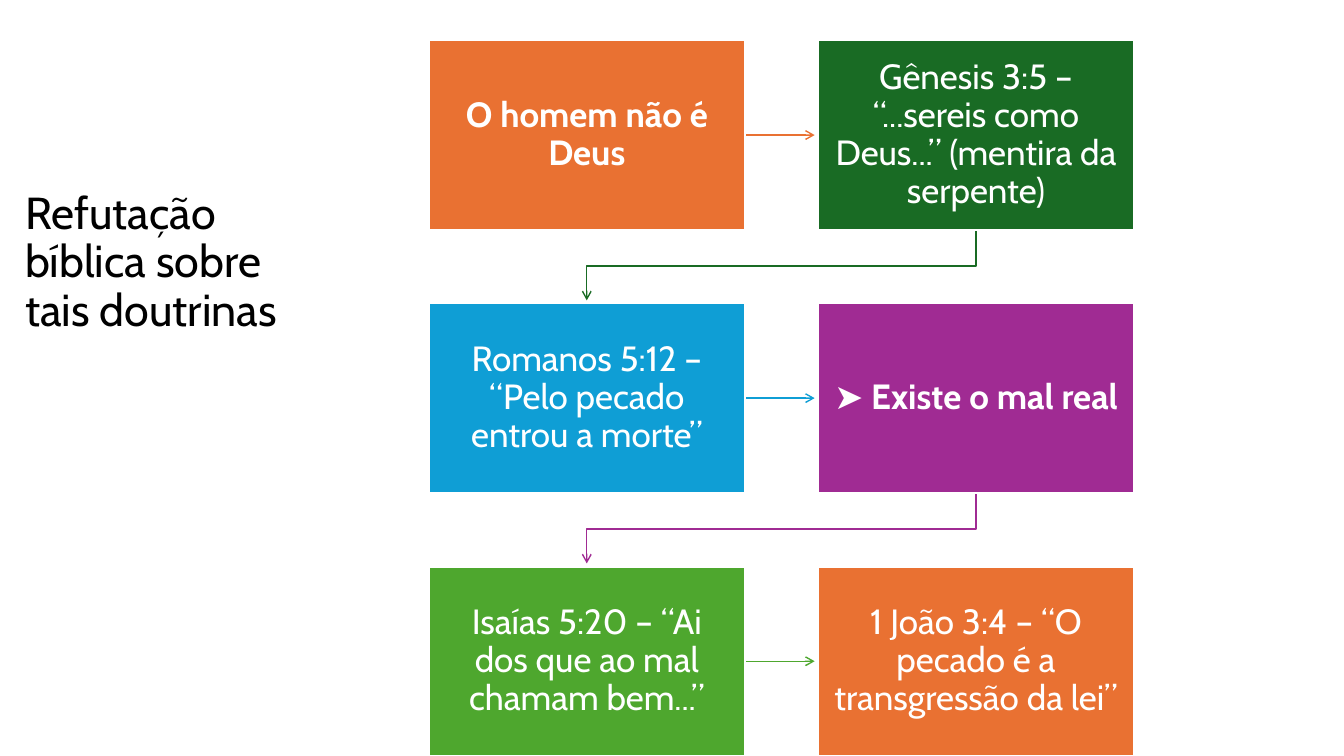
import pptx
import pptx.dml.color
import pptx.enum.shapes
import pptx.enum.text
import pptx.oxml
import pptx.oxml.ns
import pptx.util
from pptx.util import Inches

BOX_WIDTH, BOX_HEIGHT = 3.14, 1.88
LEFT, TOP = 4.25, 0.4
COLUMN_STEP, ROW_STEP = 3.86, 2.61
ARROW_GAP = 0.03

STEPS = [
    ("E97132", [("O homem não é Deus", True)]),
    ("196B24", [("Gênesis 3:5 – “...sereis como Deus...” (mentira da serpente)", False)]),
    ("0F9ED5", [("Romanos 5:12 – “Pelo pecado entrou a morte”", False)]),
    ("A02B93", [("➤ ", False), ("Existe o mal real", True)]),
    ("4EA72E", [("Isaías 5:20 – “Ai dos que ao mal chamam bem...”", False)]),
    ("E97132", [("1 João 3:4 – “O pecado é a transgressão da lei”", False)]),
]


def color(value):
    return pptx.dml.color.RGBColor.from_string(value)


class FlowSlide:
    """Draws the title, boxes and arrows of one slide in a shared style."""

    font = "Cabin"

    def __init__(self, presentation):
        self.slide = presentation.slides.add_slide(presentation.slide_layouts[6])

    def add_text(self, shape, runs, size, text_color, alignment):
        frame = shape.text_frame
        frame.word_wrap = True
        frame.vertical_anchor = pptx.enum.text.MSO_ANCHOR.MIDDLE
        paragraph = frame.paragraphs[0]
        paragraph.alignment = alignment
        paragraph.line_spacing = 0.9
        for text, bold in runs:
            run = paragraph.add_run()
            run.text = text
            run.font.name = self.font
            run.font.size = pptx.util.Pt(size)
            run.font.bold = bold
            run.font.color.rgb = color(text_color)

    def title(self, text, left, top, width, height):
        shape = self.slide.shapes.add_textbox(
            Inches(left), Inches(top), Inches(width), Inches(height))
        self.add_text(shape, [(text, False)], 32, "000000", pptx.enum.text.PP_ALIGN.LEFT)

    def box(self, left, top, fill, runs):
        shape = self.slide.shapes.add_shape(
            pptx.enum.shapes.MSO_SHAPE.RECTANGLE,
            Inches(left), Inches(top), Inches(BOX_WIDTH), Inches(BOX_HEIGHT))
        shape.shadow.inherit = False
        shape.fill.solid()
        shape.fill.fore_color.rgb = color(fill)
        shape.line.color.rgb = color("FFFFFF")
        shape.line.width = pptx.util.Pt(1.5)
        frame = shape.text_frame
        frame.margin_left = frame.margin_right = Inches(0.15)
        frame.margin_top = frame.margin_bottom = Inches(0.16)
        self.add_text(shape, runs, 25, "FFFFFF", pptx.enum.text.PP_ALIGN.CENTER)

    def arrow_line(self, shape, line_color):
        shape.line.color.rgb = color(line_color)
        shape.line.width = pptx.util.Pt(1)
        properties = shape.element.spPr
        line = properties.find(pptx.oxml.ns.qn("a:ln"))
        namespace = pptx.oxml.ns.nsdecls("a")
        line.append(pptx.oxml.parse_xml(f'<a:tailEnd {namespace} type="arrow"/>'))

    def straight_arrow(self, start, end, line_color):
        connector = self.slide.shapes.add_connector(
            pptx.enum.shapes.MSO_CONNECTOR.STRAIGHT,
            *[Inches(value) for value in start + end])
        self.arrow_line(connector, line_color)
        namespace = pptx.oxml.ns.nsdecls("a")
        connector.element.spPr.append(
            pptx.oxml.parse_xml(f"<a:effectLst {namespace}/>"))

    def elbow_arrow(self, start, end, line_color):
        middle = start[1] + 0.36
        points = [start, (start[0], middle), (end[0], middle), end]
        first, *others = [(Inches(x), Inches(y)) for x, y in points]
        builder = self.slide.shapes.build_freeform(*first)
        builder.add_line_segments(others, close=False)
        shape = builder.convert_to_shape()
        shape.shadow.inherit = False
        shape.fill.background()
        self.arrow_line(shape, line_color)


def main():
    presentation = pptx.Presentation()
    presentation.slide_width = Inches(13.33)
    presentation.slide_height = Inches(7.5)
    flow = FlowSlide(presentation)
    flow.title("Refutação bíblica sobre tais doutrinas", 0.15, 0, 3.18, 5.22)
    for index, (fill, runs) in enumerate(STEPS):
        row, column = divmod(index, 2)
        left = LEFT + column * COLUMN_STEP
        top = TOP + row * ROW_STEP
        right, bottom = left + BOX_WIDTH, top + BOX_HEIGHT
        if column == 0:
            middle = top + BOX_HEIGHT / 2
            target = left + COLUMN_STEP - ARROW_GAP
            flow.straight_arrow((right, middle), (target, middle), fill)
        elif index < len(STEPS) - 1:
            center = left + BOX_WIDTH / 2
            target = (center - COLUMN_STEP, top + ROW_STEP - ARROW_GAP)
            flow.elbow_arrow((center, bottom), target, fill)
        flow.box(left, top, fill, runs)
    presentation.save("out.pptx")


if __name__ == "__main__":
    main()
